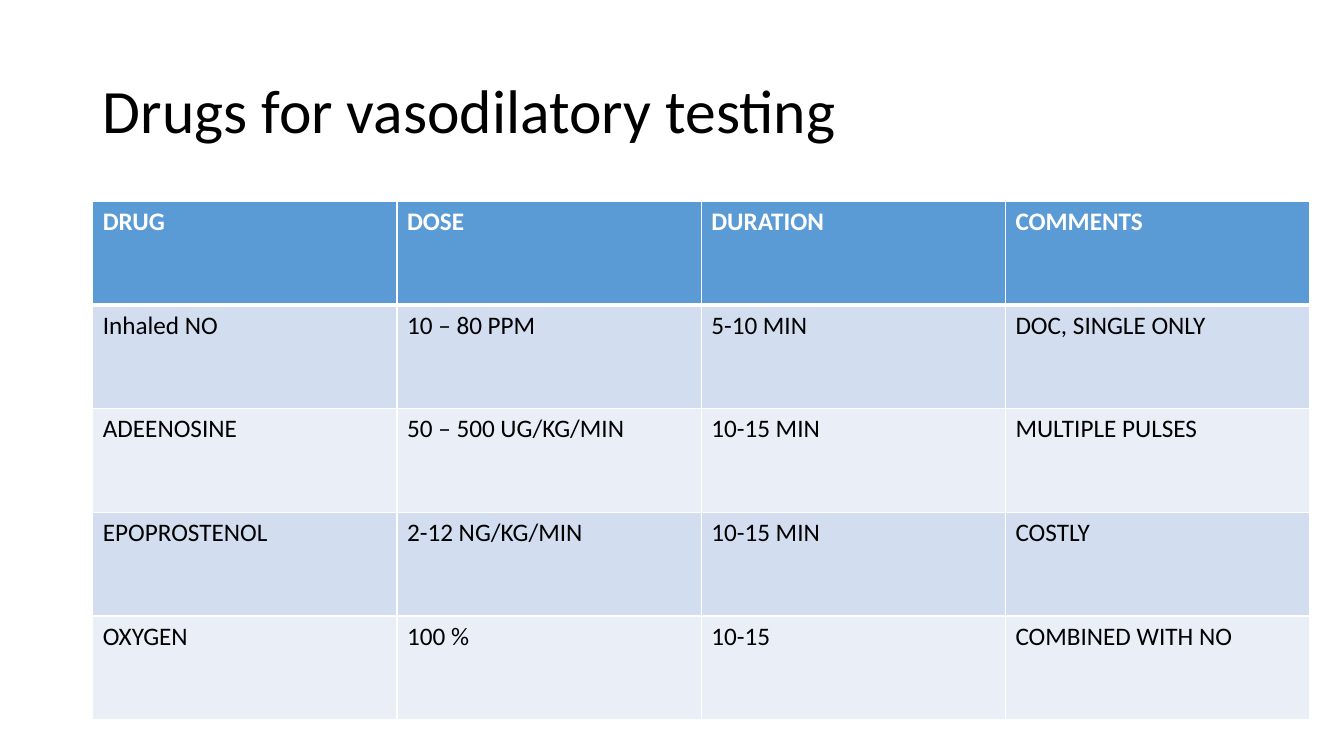
from lxml.etree import SubElement
from pptx import Presentation
from pptx.dml.color import RGBColor
from pptx.enum.text import MSO_ANCHOR, PP_ALIGN
from pptx.oxml.ns import qn
from pptx.util import Inches, Pt

COLORS = {"header": "5B9BD5", "odd": "D2DEEF", "even": "EAEFF7",
          "text": "000000", "white": "FFFFFF"}
FONT = "Calibri"
ROWS = [
    ["DRUG", "DOSE", "DURATION", "COMMENTS"],
    ["Inhaled NO", "10 – 80 PPM", "5-10 MIN", "DOC, SINGLE ONLY"],
    ["ADEENOSINE", "50 – 500 UG/KG/MIN", "10-15 MIN", "MULTIPLE PULSES"],
    ["EPOPROSTENOL", "2-12 NG/KG/MIN", "10-15 MIN", "COSTLY"],
    ["OXYGEN", "100 %", "10-15", "COMBINED WITH NO"],
]


def write(tf, text, size, color, bold=False):
    p = tf.paragraphs[0]
    p.alignment = PP_ALIGN.LEFT
    r = p.add_run()
    r.text = text
    for name, value in {"name": FONT, "size": Pt(size), "bold": bold}.items():
        setattr(r.font, name, value)
    r.font.color.rgb = RGBColor.from_string(COLORS[color])
    return p


def add_border(cell, side, width):
    ln = SubElement(cell._tc.get_or_add_tcPr(), qn(f"a:ln{side}"), w=str(Pt(width)))
    fill = SubElement(ln, qn("a:solidFill"))
    SubElement(fill, qn("a:srgbClr"), val=COLORS["white"])


prs = Presentation()
prs.slide_width, prs.slide_height = Inches(13.33), Inches(7.5)
s = prs.slides.add_slide(prs.slide_layouts[5])

title = s.shapes.title
title.left, title.top = Inches(0.92), Inches(0.4)
title.width, title.height = Inches(11.5), Inches(1.45)
title.text_frame.vertical_anchor = MSO_ANCHOR.MIDDLE
write(title.text_frame, "Drugs for vasodilatory testing", 44, "text").line_spacing = 0.9

table = s.shapes.add_table(len(ROWS), len(ROWS[0]), Inches(0.92), Inches(2),
                           Inches(12.07), Inches(5.14)).table
for i, row in enumerate(ROWS):
    header = i == 0
    band = "header" if header else "odd" if i % 2 else "even"
    for j, text in enumerate(row):
        cell = table.cell(i, j)
        write(cell.text_frame, text, 18, "white" if header else "text", header)
        widths = {"L": 1, "R": 1, "T": 3 if i == 1 else 1, "B": 3 if header else 1}
        for side, width in widths.items():
            add_border(cell, side, width)
        cell.fill.solid()
        cell.fill.fore_color.rgb = RGBColor.from_string(COLORS[band])

prs.save("out.pptx")
